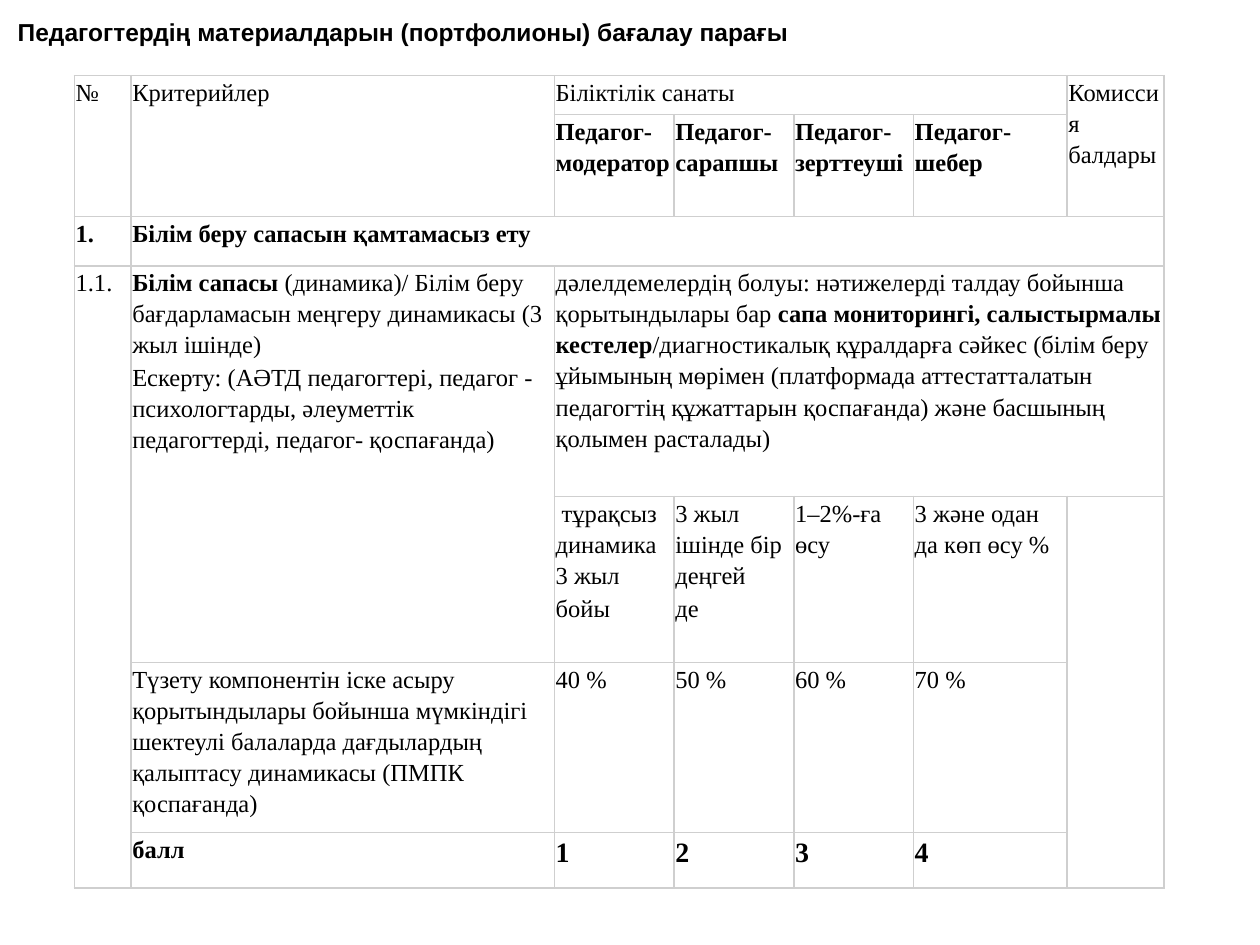
from lxml.etree import SubElement
from pptx import Presentation
from pptx.dml.color import RGBColor
from pptx.enum.text import MSO_ANCHOR
from pptx.oxml.ns import qn
from pptx.util import Inches, Pt

COLUMNS = [0.45, 3.36, 0.95, 0.95, 0.95, 1.22, 0.77]
ROWS = [0.31, 0.81, 0.39, 1.83, 1.32, 1.35, 0.44]
SPANS = [
    (0, 0, 1, 0), (0, 1, 1, 1), (0, 2, 0, 5), (0, 6, 1, 6), (2, 1, 2, 6),
    (3, 0, 6, 0), (3, 1, 4, 1), (3, 2, 3, 6), (4, 6, 6, 6),
]
PLAIN_CELLS = {
    (0, 0): ["№"],
    (0, 1): ["Критерийлер"],
    (0, 2): ["Біліктілік санаты"],
    (0, 6): ["Комиссия балдары"],
    (3, 0): ["1.1."],
    (3, 1): [
        "**Білім сапасы** (динамика)/ Білім беру бағдарламасын меңгеру "
        "динамикасы (3 жыл ішінде)",
        "Ескерту: (АӘТД педагогтері, педагог - психологтарды, әлеуметтік "
        "педагогтерді, педагог- қоспағанда)",
    ],
    (3, 2): [
        "дәлелдемелердің болуы: нәтижелерді талдау бойынша қорытындылары бар "
        "**сапа мониторингі, салыстырмалы кестелер**/диагностикалық құралдарға "
        "сәйкес (білім беру ұйымының мөрімен (платформада аттестатталатын "
        "педагогтің құжаттарын қоспағанда) және басшының қолымен расталады)"
    ],
    (4, 2): [" тұрақсыз динамика 3 жыл", "бойы"],
    (4, 3): ["3 жыл ішінде бір деңгей", "де"],
    (4, 4): ["1–2%-ға өсу"],
    (4, 5): ["3 және одан да көп өсу %"],
    (5, 1): [
        "Түзету компонентін іске асыру қорытындылары бойынша мүмкіндігі шектеулі "
        "балаларда дағдылардың қалыптасу динамикасы (ПМПК қоспағанда)"
    ],
}
BOLD_CELLS = {
    (2, 0): "1.",
    (2, 1): "Білім беру сапасын қамтамасыз ету",
    (6, 1): "балл",
}
LEVELS = ["модератор", "сарапшы", "зерттеуші", "шебер"]


def color(value):
    return RGBColor.from_string(value)


def style_font(font, name, size, bold=None):
    font.name = name
    font.size = Pt(size)
    font.bold = bold
    font.color.rgb = color("000000")


def add_title(page, deck, text):
    box = page.shapes.add_textbox(0, 0, deck.slide_width, Inches(0.5))
    frame = box.text_frame
    frame.word_wrap = True
    frame.vertical_anchor = MSO_ANCHOR.MIDDLE
    para = frame.paragraphs[0]
    style_font(para.font, "Arial", 14, True)
    indent = para.add_run()
    indent.text = " "
    indent.font.size = Pt(11)
    para.add_run().text = text


def add_borders(cell):
    properties = cell._tc.get_or_add_tcPr()
    for side in ("lnL", "lnR", "lnT", "lnB"):
        line = SubElement(properties, qn(f"a:{side}"), w=str(Pt(1)))
        fill = SubElement(line, qn("a:solidFill"))
        SubElement(fill, qn("a:srgbClr"), val="CFCFCF")


def style_cell(cell):
    cell.margin_left = cell.margin_right = 0
    cell.margin_top = cell.margin_bottom = 0
    add_borders(cell)
    cell.fill.solid()
    cell.fill.fore_color.rgb = color("FFFFFF")
    style_font(cell.text_frame.paragraphs[0].font, "Times New Roman", 14)


def write_cell(cell, texts, size=14, bold=False):
    frame = cell.text_frame
    for index, text in enumerate(texts):
        para = frame.add_paragraph() if index else frame.paragraphs[0]
        para.line_spacing = 1.15
        para.space_after = Pt(1)
        para._p.get_or_add_pPr().set("marL", str(Inches(0.01)))
        style_font(para.font, "Times New Roman", size, bold)
        for part, words in enumerate(text.split("**")):
            if words:
                span = para.add_run()
                span.text = words
                if part % 2:
                    span.font.bold = True


def add_grid(page):
    table = page.shapes.add_table(
        len(ROWS), len(COLUMNS), Inches(0.59), Inches(0.6),
        Inches(sum(COLUMNS)), Inches(sum(ROWS)),
    ).table
    table.first_row = table.horz_banding = False
    for column, width in zip(table.columns, COLUMNS):
        column.width = Inches(width)
    for row, height in zip(table.rows, ROWS):
        row.height = Inches(height)
    for cell in table.iter_cells():
        style_cell(cell)
    for top, left, bottom, right in SPANS:
        table.cell(top, left).merge(table.cell(bottom, right))
    return table


def fill_grid(table):
    for place, texts in PLAIN_CELLS.items():
        write_cell(table.cell(*place), texts)
    for place, text in BOLD_CELLS.items():
        write_cell(table.cell(*place), [text], bold=True)
    for index, level in enumerate(LEVELS):
        column = index + 2
        write_cell(table.cell(1, column), [f"Педагог-{level}"], bold=True)
        write_cell(table.cell(5, column), [f"{40 + 10 * index} %"])
        write_cell(table.cell(6, column), [str(index + 1)], 16, True)


def main():
    deck = Presentation()
    deck.slide_width, deck.slide_height = Inches(10), Inches(7.5)
    page = deck.slides.add_slide(deck.slide_layouts[6])
    add_title(page, deck, "Педагогтердің материалдарын (портфолионы) бағалау парағы")
    fill_grid(add_grid(page))
    deck.save("out.pptx")


if __name__ == "__main__":
    main()
